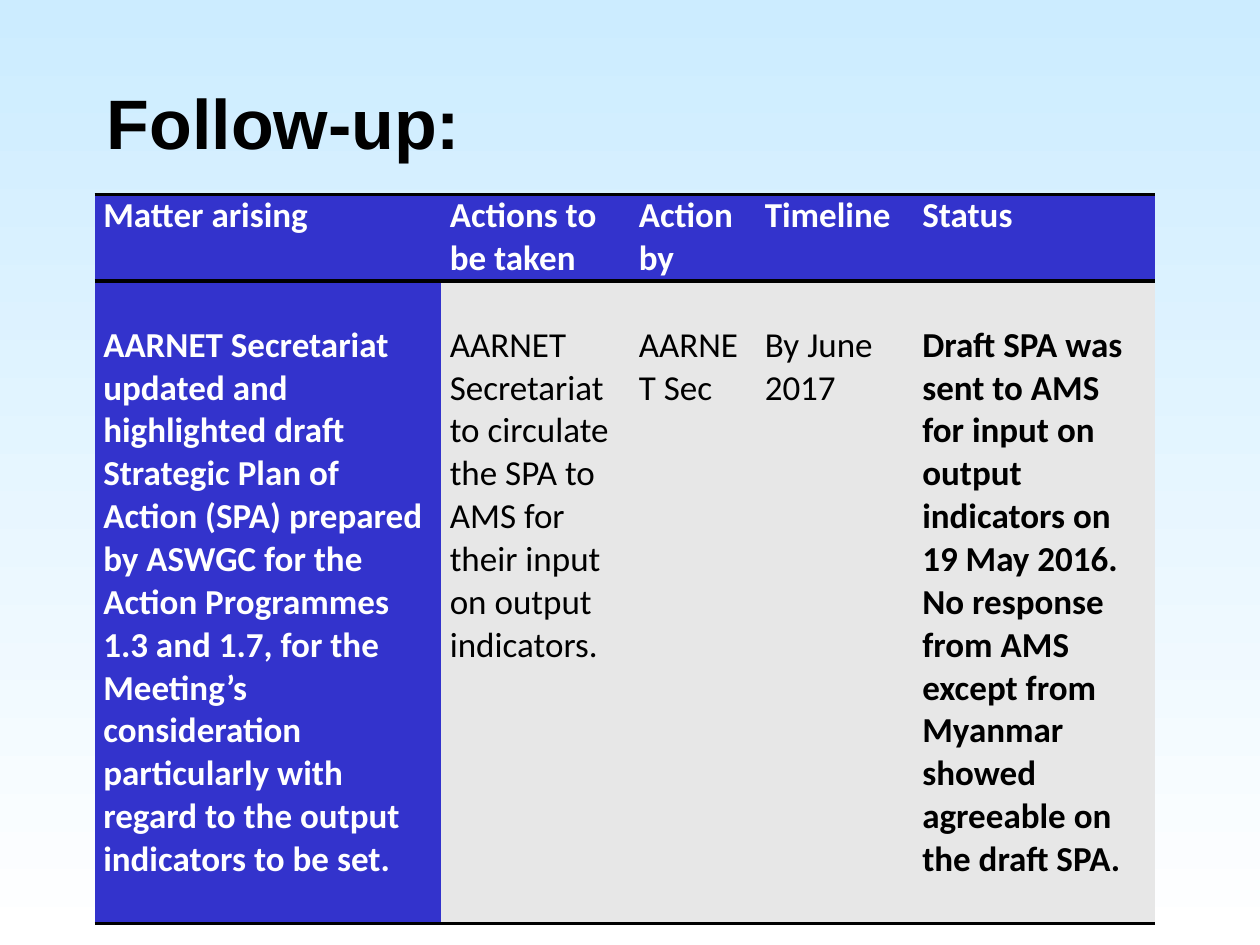
from dataclasses import dataclass

from lxml import etree
from pptx import Presentation
from pptx.dml.color import RGBColor
from pptx.enum.shapes import MSO_SHAPE
from pptx.enum.text import MSO_ANCHOR, MSO_AUTO_SIZE
from pptx.oxml.ns import qn
from pptx.util import Inches, Pt

RECTANGLE = MSO_SHAPE.RECTANGLE
MIDDLE = MSO_ANCHOR.MIDDLE
FIT_SHAPE = MSO_AUTO_SIZE.SHAPE_TO_FIT_TEXT


@dataclass(frozen=True)
class Theme:
    sky: str = "CCECFF"
    white: str = "FFFFFF"
    black: str = "000000"
    accent: str = "3333CC"
    grey: str = "E7E7E7"
    title_font: str = "Arial"
    table_font: str = "Calibri"
    title_size: int = 40
    table_size: int = 20
    rule_width: int = 2


THEME = Theme()

COLUMN_WIDTHS = [2.75, 1.5, 1, 1.25, 1.92]
ROW_HEIGHTS = [0.69, 5.1]
TOP_MARGINS = [0, 0.34]  # the body text starts one line down
ROWS = [
    ["Matter arising", "Actions to be taken", "Action by", "Timeline", "Status"],
    [
        "AARNET Secretariat updated and highlighted draft Strategic Plan of "
        "Action (SPA) prepared by ASWGC for the Action Programmes 1.3 and 1.7, "
        "for the Meeting’s consideration particularly with regard to the output "
        "indicators to be set.",
        "AARNET Secretariat to circulate the SPA to AMS for their input on "
        "output indicators.",
        "AARNET Sec",
        "By June 2017",
        "Draft SPA was sent to AMS for input on output indicators on 19 May "
        "2016. No response from AMS except from Myanmar showed agreeable on "
        "the draft SPA.",
    ],
]


def set_font(paragraph, name, size, color, bold):
    font = paragraph.font
    font.name = name
    font.size = Pt(size)
    font.bold = bold
    font.color.rgb = RGBColor.from_string(color)


def add_backdrop(page, width, height):
    backdrop = page.shapes.add_shape(RECTANGLE, 0, 0, width, height)
    backdrop.shadow.inherit = False
    backdrop.line.fill.background()
    backdrop.fill.gradient()
    backdrop.fill.gradient_angle = 270
    for stop, color in zip(backdrop.fill.gradient_stops, (THEME.sky, THEME.white)):
        stop.color.rgb = RGBColor.from_string(color)


def add_title(page, text):
    box = page.shapes.add_textbox(Inches(0.75), Inches(0.58), Inches(3.03), Inches(0.72))
    frame = box.text_frame
    frame.word_wrap = False
    frame.auto_size = FIT_SHAPE
    frame.vertical_anchor = MIDDLE
    frame.margin_bottom = 0
    frame.text = text
    set_font(frame.paragraphs[0], THEME.title_font, THEME.title_size, THEME.black, True)


def set_borders(cell):
    """Rule the cell above and below, and leave its sides open."""
    properties = cell._tc.get_or_add_tcPr()
    for index, side in enumerate(("lnL", "lnR", "lnT", "lnB")):
        line = etree.Element(qn(f"a:{side}"), w=str(Pt(THEME.rule_width)))
        if side in ("lnT", "lnB"):
            fill = etree.SubElement(line, qn("a:solidFill"))
            etree.SubElement(fill, qn("a:srgbClr"), val=THEME.black)
        else:
            etree.SubElement(line, qn("a:noFill"))
        properties.insert(index, line)


def fill_cell(cell, text, top_margin, is_accent, bold):
    cell.text = text
    cell.margin_left = cell.margin_right = Inches(0.07)
    cell.margin_top = Inches(top_margin)
    cell.margin_bottom = 0
    cell.fill.solid()
    cell.fill.fore_color.rgb = RGBColor.from_string(THEME.accent if is_accent else THEME.grey)
    color = THEME.white if is_accent else THEME.black
    set_font(cell.text_frame.paragraphs[0], THEME.table_font, THEME.table_size, color, bold)
    set_borders(cell)


def add_action_table(page):
    frame = page.shapes.add_table(
        len(ROWS), len(COLUMN_WIDTHS), Inches(0.75), Inches(1.54),
        Inches(sum(COLUMN_WIDTHS)), Inches(sum(ROW_HEIGHTS)))
    table = frame.table
    table.horz_banding = False
    for column, width in zip(table.columns, COLUMN_WIDTHS):
        column.width = Inches(width)
    for row, height in zip(table.rows, ROW_HEIGHTS):
        row.height = Inches(height)
    last = len(COLUMN_WIDTHS) - 1
    for r, texts in enumerate(ROWS):
        for c, text in enumerate(texts):
            is_accent = r == 0 or c == 0
            fill_cell(table.cell(r, c), text, TOP_MARGINS[r], is_accent, is_accent or c == last)


def main():
    deck = Presentation()
    deck.slide_width = Inches(10)
    deck.slide_height = Inches(7.5)
    page = deck.slides.add_slide(deck.slide_layouts[6])
    add_backdrop(page, deck.slide_width, deck.slide_height)
    add_action_table(page)
    add_title(page, "Follow-up:")
    deck.save("out.pptx")


if __name__ == "__main__":
    main()
